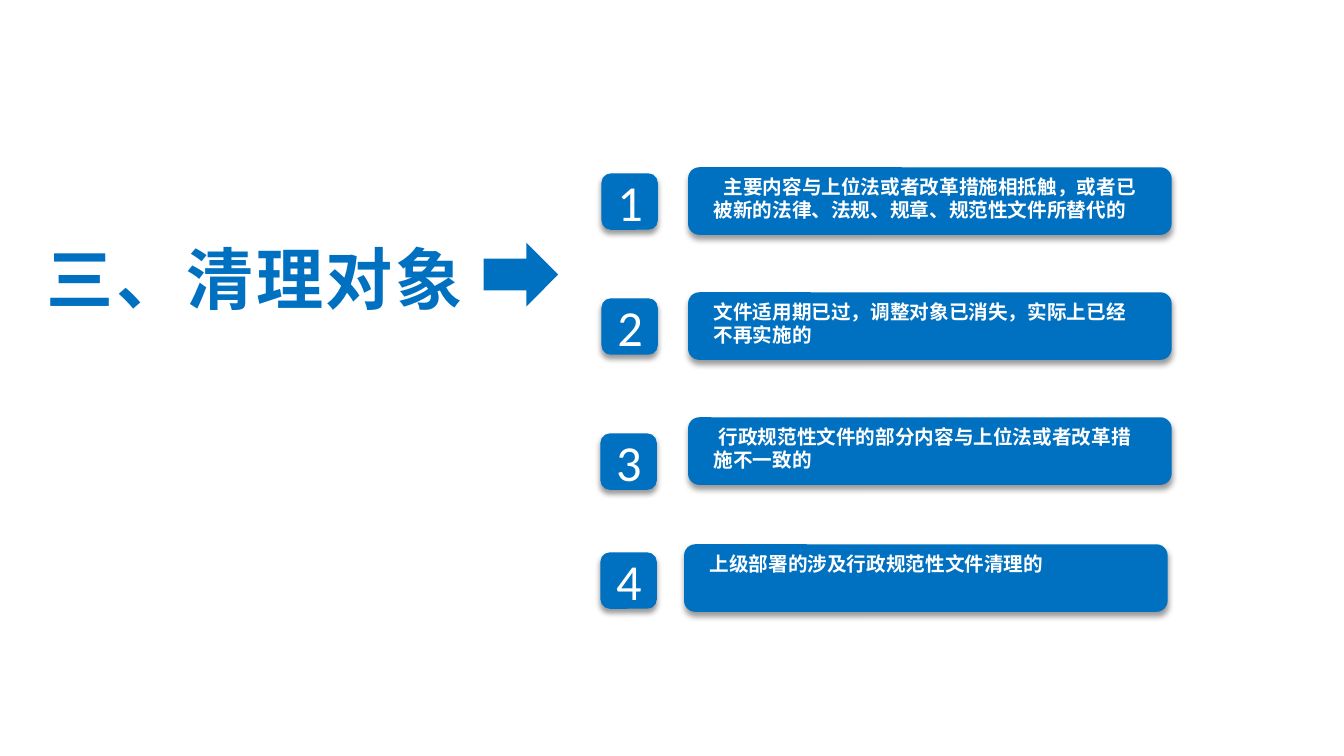
from dataclasses import dataclass

from lxml import etree
from pptx import Presentation
from pptx.dml.color import RGBColor
from pptx.enum.shapes import MSO_SHAPE
from pptx.enum.text import MSO_ANCHOR, MSO_AUTO_SIZE, PP_ALIGN
from pptx.oxml.ns import qn
from pptx.util import Pt

EMU_PER_PX = 9144


@dataclass(frozen=True)
class Theme:
    blue: RGBColor = RGBColor(0x00, 0x70, 0xC0)
    white: RGBColor = RGBColor(0xFF, 0xFF, 0xFF)
    shadow: str = "000000"
    latin: str = "Calibri"
    chinese: str = "Noto Sans CJK SC"
    title_size: int = 48
    number_size: int = 36
    item_size: int = 14


@dataclass(frozen=True)
class Box:
    left: int
    top: int
    width: int
    height: int

    def emu(self):
        return [px(length) for length in (self.left, self.top, self.width, self.height)]


THEME = Theme()
TITLE_BOX = Box(13, 228, 460, 94)
ARROW_BOX = Box(480, 241, 74, 63)
ITEMS = [
    (Box(597, 172, 56, 56), Box(683, 166, 480, 67), 10,
     "主要内容与上位法或者改革措施相抵触，或者已被新的法律、法规、规章、规范性文件所替代的"),
    (Box(597, 296, 56, 56), Box(683, 290, 480, 67), 0,
     "文件适用期已过，调整对象已消失，实际上已经不再实施的"),
    (Box(596, 430, 56, 56), Box(683, 414, 480, 67), 5,
     "行政规范性文件的部分内容与上位法或者改革措施不一致的"),
    (Box(596, 548, 56, 56), Box(679, 540, 480, 67), 0,
     "上级部署的涉及行政规范性文件清理的"),
]


def px(length):
    return length * EMU_PER_PX


def write_text(shape, text, size, color, font_name, bold=False, align=PP_ALIGN.LEFT,
               anchor=MSO_ANCHOR.TOP, insets=(13, 7, 13, 7), indent=0, spacing=0):
    frame = shape.text_frame
    frame.word_wrap = True
    frame.auto_size = MSO_AUTO_SIZE.NONE
    frame.vertical_anchor = anchor
    (frame.margin_left, frame.margin_top,
     frame.margin_right, frame.margin_bottom) = map(px, insets)
    para = frame.paragraphs[0]
    para.text = text
    para.alignment = align
    if indent:
        para._p.get_or_add_pPr().set("indent", str(px(indent)))
    font = para.font
    font.size = Pt(size)
    font.bold = bold
    font.color.rgb = color
    font.name = font_name
    properties = para._p.pPr.find(qn("a:defRPr"))
    etree.SubElement(properties, qn("a:ea")).set("typeface", font_name)
    if spacing:
        properties.set("spc", str(spacing * 100))


def add_blue_shape(page, kind, box):
    shape = page.shapes.add_shape(kind, *box.emu())
    shape.shadow.inherit = False
    shape.fill.solid()
    shape.fill.fore_color.rgb = THEME.blue
    shape.line.fill.background()
    return shape


def add_card(page, box):
    card = add_blue_shape(page, MSO_SHAPE.ROUNDED_RECTANGLE, box)
    effects = card._element.spPr.find(qn("a:effectLst"))
    shadow = etree.SubElement(effects, qn("a:outerShdw"), blurRad=str(Pt(4)),
                              dist=str(Pt(3)), dir="5400000", rotWithShape="0")
    color = etree.SubElement(shadow, qn("a:srgbClr"), val=THEME.shadow)
    etree.SubElement(color, qn("a:alpha"), val="40000")
    return card


def place_heading(page, title_box, arrow_box):
    title = page.shapes.title
    title.left, title.top, title.width, title.height = title_box.emu()
    write_text(title, "三、清理对象", THEME.title_size, THEME.blue, THEME.chinese,
               bold=True, align=PP_ALIGN.RIGHT, spacing=2)
    add_blue_shape(page, MSO_SHAPE.RIGHT_ARROW, arrow_box)


def place_item(page, number, badge_box, panel_box, indent, text):
    badge = add_card(page, badge_box)
    write_text(badge, str(number), THEME.number_size, THEME.white, THEME.latin,
               align=PP_ALIGN.CENTER, anchor=MSO_ANCHOR.MIDDLE)
    panel = add_card(page, panel_box)
    write_text(panel, text, THEME.item_size, THEME.white, THEME.chinese,
               bold=True, insets=(22, 4, 24, 4), indent=indent)


def main():
    deck = Presentation()
    deck.slide_width, deck.slide_height = px(1334), px(750)
    page = deck.slides.add_slide(deck.slide_layouts[5])
    place_heading(page, TITLE_BOX, ARROW_BOX)
    for number, item in enumerate(ITEMS, start=1):
        place_item(page, number, *item)
    deck.save("out.pptx")


if __name__ == "__main__":
    main()
